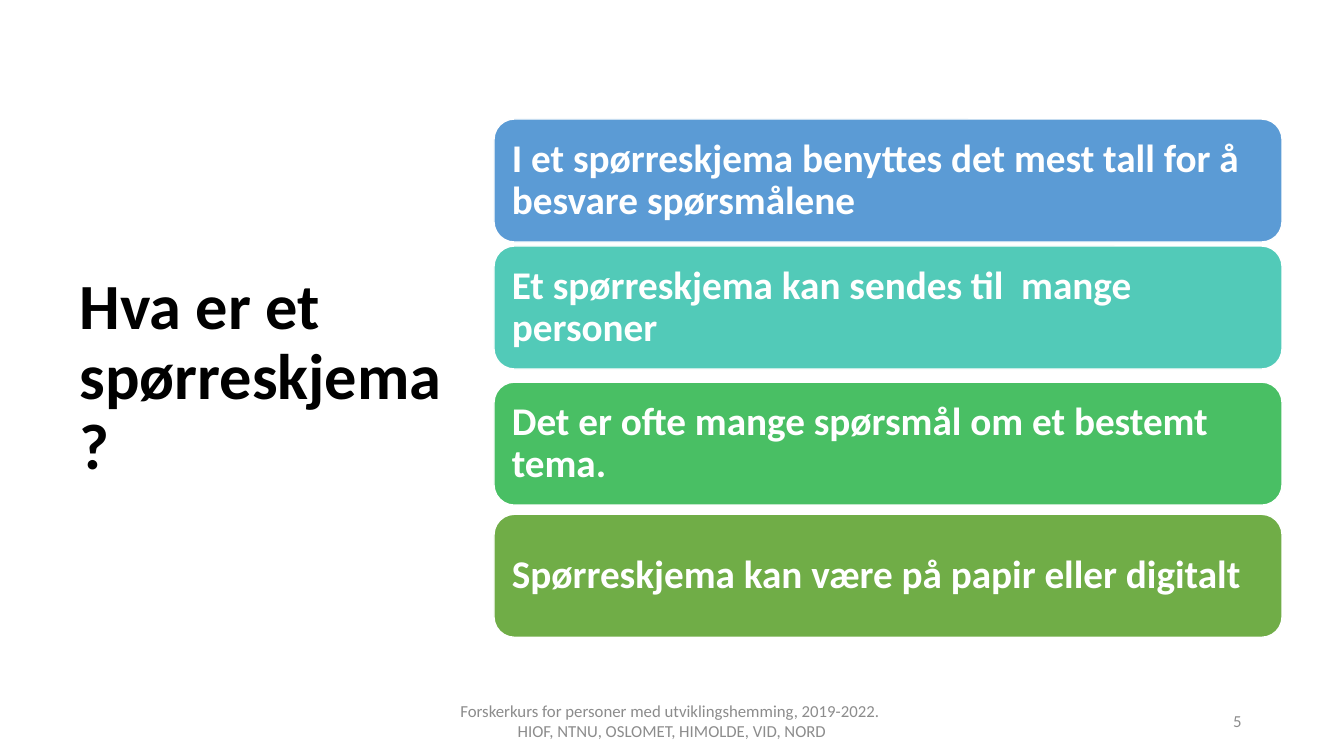
import pptx
import pptx.util
import pptx.dml.color
import pptx.enum.shapes
import pptx.enum.text

Cm = pptx.util.Cm
Pt = pptx.util.Pt
RGBColor = pptx.dml.color.RGBColor
ALIGN = pptx.enum.text.PP_ALIGN

BLACK = RGBColor(0x00, 0x00, 0x00)
WHITE = RGBColor(0xFF, 0xFF, 0xFF)
GREY = RGBColor(0x8C, 0x8C, 0x8C)
BLUE = RGBColor(0x5B, 0x9B, 0xD5)
TEAL = RGBColor(0x52, 0xCA, 0xB8)
GREEN = RGBColor(0x49, 0xBF, 0x64)
OLIVE = RGBColor(0x70, 0xAD, 0x47)

CARD_HEIGHT = 3.1
CARDS = [
    (0, BLUE, "I et spørreskjema benyttes det mest tall for å besvare spørsmålene"),
    (3.2, TEAL, "Et spørreskjema kan sendes til  mange personer"),
    (6.63, GREEN, "Det er ofte mange spørsmål om et bestemt tema."),
    (9.96, OLIVE, "Spørreskjema kan være på papir eller digitalt"),
]
FOOTER = ("Forskerkurs for personer med utviklingshemming, 2019-2022.  "
          "HIOF, NTNU, OSLOMET, HIMOLDE, VID, NORD")


def write(sp, text, size, color, bold=False, align=ALIGN.LEFT, spacing=1.0):
    tf = sp.text_frame
    tf.word_wrap = True
    tf.auto_size = pptx.enum.text.MSO_AUTO_SIZE.NONE
    tf.vertical_anchor = pptx.enum.text.MSO_ANCHOR.MIDDLE
    p = tf.paragraphs[0]
    p.alignment = align
    p.line_spacing = spacing
    r = p.add_run()
    r.text = text
    r.font.name = "Calibri"
    r.font.size = Pt(size)
    r.font.bold = bold
    r.font.color.rgb = color


def place_title(s, left, top, width, height):
    sp = s.shapes.title
    sp.left, sp.top, sp.width, sp.height = Cm(left), Cm(top), Cm(width), Cm(height)
    write(sp, "Hva er et spørreskjema?", 46, BLACK, bold=True, spacing=0.9)


def add_cards(s, left, top, width):
    for offset, color, text in CARDS:
        sp = s.shapes.add_shape(
            pptx.enum.shapes.MSO_SHAPE.ROUNDED_RECTANGLE,
            Cm(left), Cm(top + offset), Cm(width), Cm(CARD_HEIGHT))
        sp.shadow.inherit = False
        sp.fill.solid()
        sp.fill.fore_color.rgb = color
        sp.line.color.rgb = WHITE
        sp.line.width = Pt(1)
        tf = sp.text_frame
        tf.margin_left = tf.margin_right = Cm(0.3)
        tf.margin_top = tf.margin_bottom = Cm(0.3)
        write(sp, text, 28, WHITE, bold=True, spacing=0.9)


def add_footer(s, left, top, width, height):
    number_width = 7.62
    parts = [
        (left, 11.43, FOOTER, ALIGN.CENTER),
        (left + width - number_width, number_width, "5", ALIGN.RIGHT),
    ]
    for x, w, text, align in parts:
        sp = s.shapes.add_textbox(Cm(x), Cm(top), Cm(w), Cm(height))
        write(sp, text, 12, GREY, align=align)


def main():
    prs = pptx.Presentation()
    prs.slide_width = Cm(33.87)
    prs.slide_height = Cm(19.05)
    s = prs.slides.add_slide(prs.slide_layouts[5])
    place_title(s, 1.75, 1.78, 10.06, 15.52)
    add_cards(s, 12.45, 3, 19.86)
    add_footer(s, 11.22, 17.66, 20.32, 1.01)
    prs.save("out.pptx")


if __name__ == "__main__":
    main()
